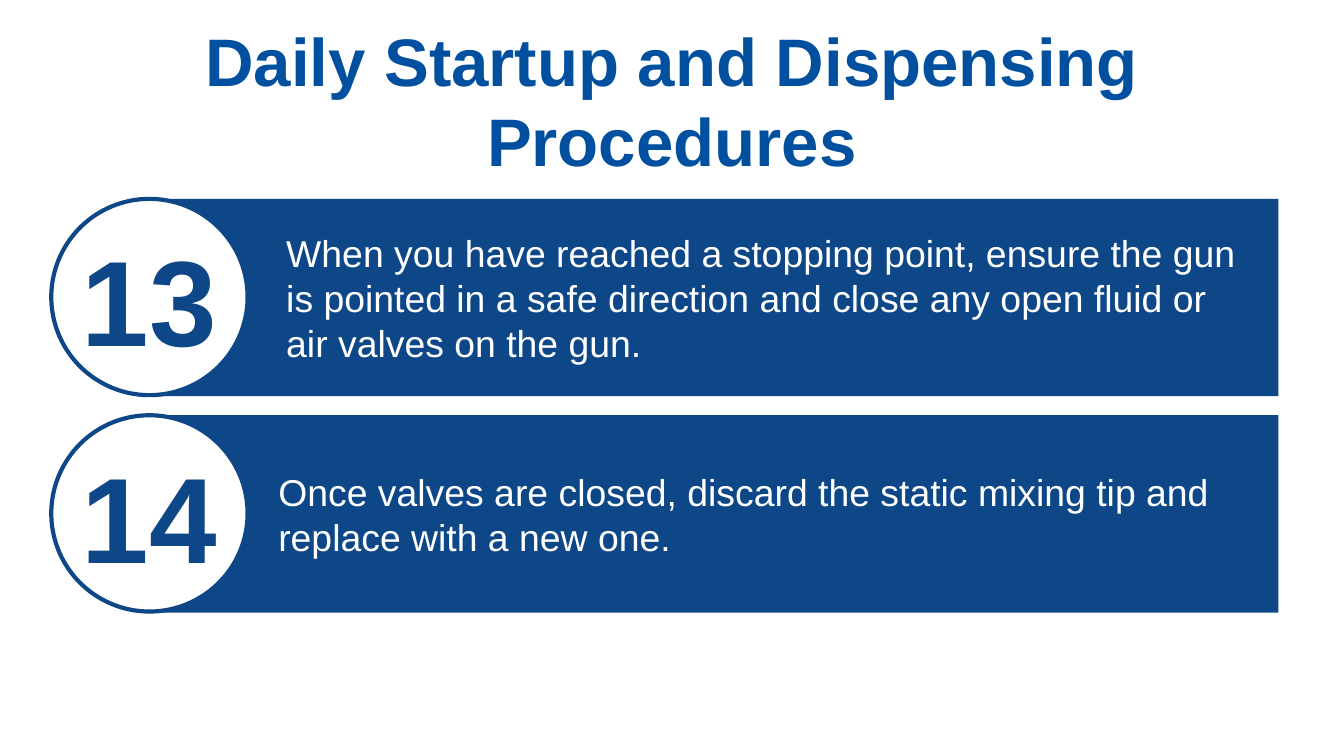
from pptx import Presentation
from pptx.dml.color import RGBColor
from pptx.enum.shapes import MSO_SHAPE as Shape
from pptx.enum.text import MSO_ANCHOR as Anchor, PP_ALIGN as Align
from pptx.util import Cm, Pt

TITLE = "Daily Startup and Dispensing Procedures"
STEPS = [
    ("13", "When you have reached a stopping point, ensure the gun is pointed in "
           "a safe direction and close any open fluid or air valves on the gun.", 2.54),
    ("14", "Once valves are closed, discard the static mixing tip and replace "
           "with a new one.", 2.39),
]
NAVY, BLUE, WHITE = "0D4787", "00509F", "FFFFFF"
WIDTH, HEIGHT = 25.4, 14.29
FIRST_TOP, PITCH = 3.76, 4.09
BAR_LEFT, BAR_WIDTH, BAR_HEIGHT = 2.87, 21.29, 3.73
CIRCLE_LEFT, CIRCLE_SIZE = 0.97, 3.71
NUMBER_DROP, NUMBER_HEIGHT = 0.38, 3.02


def color(value):
    return RGBColor.from_string(value)


def write(box, text, size, ink, bold=False, align=Align.LEFT, anchor=Anchor.MIDDLE):
    frame = box.text_frame
    frame.word_wrap = True
    frame.vertical_anchor = anchor
    para = frame.paragraphs[0]
    para.alignment = align
    span = para.add_run()
    span.text = text
    span.font.name = "Arial"
    span.font.size = Pt(size)
    span.font.bold = bold
    span.font.color.rgb = color(ink)


def add_filled(page, kind, left, top, width, height, fill):
    shape = page.shapes.add_shape(kind, Cm(left), Cm(top), Cm(width), Cm(height))
    shape.shadow.inherit = False
    shape.fill.solid()
    shape.fill.fore_color.rgb = color(fill)
    shape.line.fill.background()
    return shape


def add_step(page, top, number, text, inset):
    bar = add_filled(page, Shape.RECTANGLE, BAR_LEFT, top, BAR_WIDTH, BAR_HEIGHT, NAVY)
    bar.text_frame.margin_left = Cm(inset)
    bar.text_frame.margin_right = Cm(0.76)
    write(bar, text, 20, WHITE)

    circle = add_filled(page, Shape.OVAL, CIRCLE_LEFT, top, CIRCLE_SIZE, CIRCLE_SIZE, WHITE)
    circle.line.color.rgb = color(NAVY)
    circle.line.width = Pt(2.25)

    label = page.shapes.add_textbox(
        Cm(CIRCLE_LEFT), Cm(top + NUMBER_DROP), Cm(CIRCLE_SIZE), Cm(NUMBER_HEIGHT))
    write(label, number, 65, NAVY, True, Align.CENTER, Anchor.TOP)


deck = Presentation()
deck.slide_width, deck.slide_height = Cm(WIDTH), Cm(HEIGHT)
page = deck.slides.add_slide(deck.slide_layouts[6])

for index, (number, text, inset) in enumerate(STEPS):
    add_step(page, FIRST_TOP + index * PITCH, number, text, inset)

heading = page.shapes.add_textbox(Cm(0), Cm(0.69), Cm(WIDTH), Cm(2.39))
write(heading, TITLE, 36, BLUE, True, Align.CENTER)

deck.save("out.pptx")
